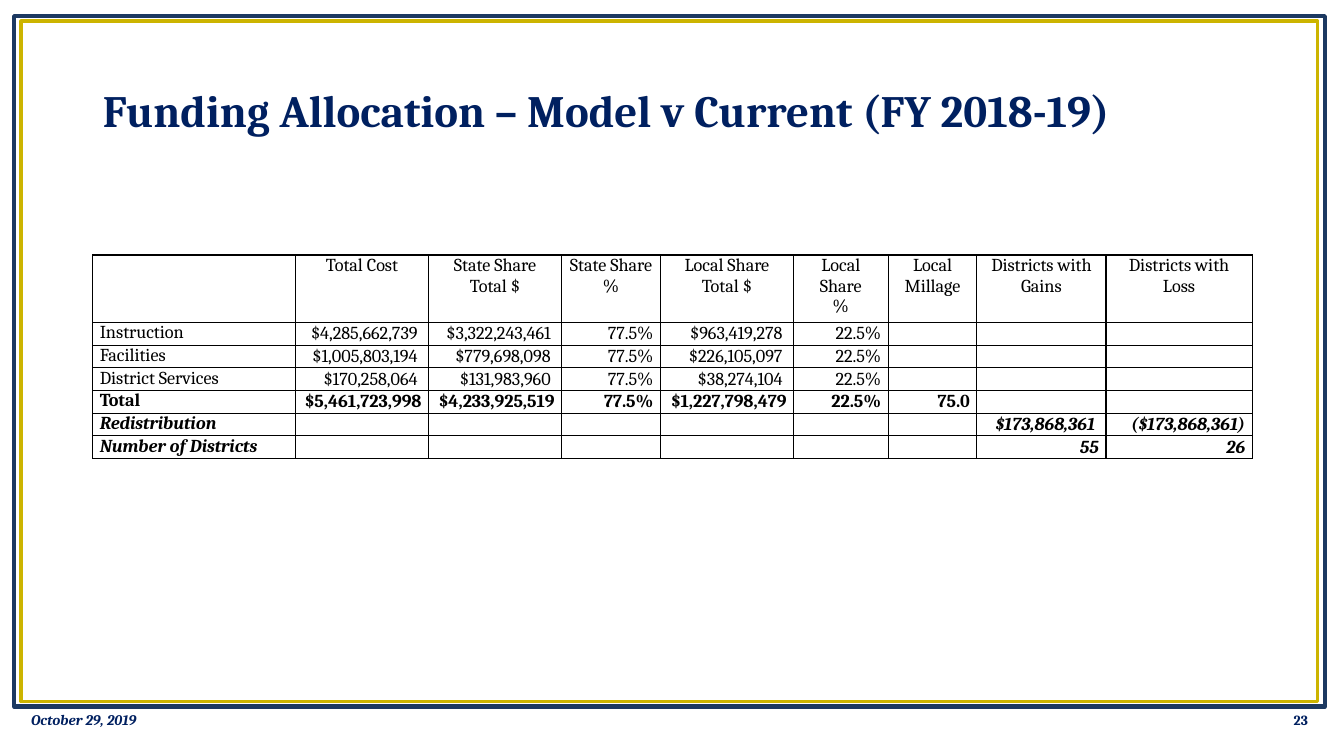
import dataclasses
import pptx
import pptx.dml.color
import pptx.enum.shapes
import pptx.enum.text
import pptx.oxml
import pptx.oxml.ns
import pptx.util
from pptx.util import Inches

ALIGN = pptx.enum.text.PP_ALIGN
ANCHOR = pptx.enum.text.MSO_ANCHOR


@dataclasses.dataclass(frozen=True)
class Theme:
    """Hold the colours, font and type sizes."""
    face: str = "Cambria"
    navy: str = "002060"
    frame: str = "1C3961"
    gold: str = "CCB400"
    ink: str = "000000"
    title: float = 32
    cell: float = 13
    date: float = 10.5
    page: float = 10


THEME = Theme()
WIDTHS = [2.01, 1.32, 1.32, 0.98, 1.32, 0.94, 0.88, 1.28, 1.45]
HEAD, LINE = 0.67, 0.225
ROWS = [
    ["", "Total Cost", "State Share\nTotal $", "State Share\n%",
     "Local Share\nTotal $", "Local Share\n%", "Local Millage",
     "Districts with Gains", "Districts with Loss"],
    ["Instruction", "$4,285,662,739 ", "$3,322,243,461 ", "77.5%",
     "$963,419,278 ", "22.5%", "", "", ""],
    ["Facilities", "$1,005,803,194 ", "$779,698,098 ", "77.5%",
     "$226,105,097 ", "22.5%", "", "", ""],
    ["District Services", "$170,258,064 ", "$131,983,960 ", "77.5%",
     "$38,274,104 ", "22.5%", "", "", ""],
    ["Total", "$5,461,723,998 ", "$4,233,925,519 ", "77.5%",
     "$1,227,798,479", "22.5%", "75.0", "", ""],
    ["Redistribution", "", "", "", "", "", "", "$173,868,361 ", "($173,868,361)"],
    ["Number of Districts", "", "", "", "", "", "", "55", "26"],
]
TOTAL, SHIFT, LAST = 4, 5, 6


def tint(code):
    """Turn a hex code into a colour."""
    return pptx.dml.color.RGBColor.from_string(code)


def style(frame, size, code, align, bold=False, slant=False):
    """Format every run in a text frame."""
    for para in frame.paragraphs:
        para.alignment = align
        for run in para.runs:
            font = run.font
            font.name, font.size = THEME.face, pptx.util.Pt(size)
            font.bold, font.italic = bold, slant
            font.color.rgb = tint(code)


def border(slide, box, code, weight):
    """Draw one unfilled frame in the box."""
    kind = pptx.enum.shapes.MSO_SHAPE.RECTANGLE
    shape = slide.shapes.add_shape(kind, *map(Inches, box))
    shape.shadow.inherit = False
    shape.fill.background()
    shape.line.color.rgb = tint(code)
    shape.line.width = pptx.util.Pt(weight)


def heading(slide, box, text):
    """Place the slide title in the box."""
    shape = slide.shapes.title
    shape.left, shape.top, shape.width, shape.height = map(Inches, box)
    frame = shape.text_frame
    frame.text = text
    frame.word_wrap = True
    frame.auto_size = pptx.enum.text.MSO_AUTO_SIZE.NONE
    frame.vertical_anchor = ANCHOR.MIDDLE
    frame.paragraphs[0].line_spacing = 0.9
    style(frame, THEME.title, THEME.navy, ALIGN.LEFT, bold=True)


def rule(cell):
    """Draw thin lines on all four sides of a cell."""
    props = cell._tc.get_or_add_tcPr()
    for spot, side in enumerate(["lnL", "lnR", "lnT", "lnB"]):
        props.insert(spot, pptx.oxml.parse_xml(
            f'<a:{side} {pptx.oxml.ns.nsdecls("a")} w="12700"><a:solidFill>'
            f'<a:srgbClr val="{THEME.ink}"/></a:solidFill></a:{side}>'))


def fill(cell, text, row, col):
    """Write and format one cell by its place in the grid."""
    cell.fill.background()
    rule(cell)
    cell.margin_left = cell.margin_right = Inches(0.07)
    cell.margin_top = cell.margin_bottom = 0
    frame = cell.text_frame
    frame.text = text
    if not text:
        end = frame.paragraphs[0]._p.get_or_add_endParaRPr()
        end.set("sz", str(int(THEME.cell * 100)))
    if row == 0 or col == 0:
        cell.vertical_anchor = ANCHOR.TOP
    else:
        cell.vertical_anchor = ANCHOR.BOTTOM if row == LAST else ANCHOR.MIDDLE
    align = ALIGN.CENTER if row == 0 else ALIGN.LEFT if col == 0 else ALIGN.RIGHT
    style(frame, THEME.cell, THEME.ink, align, row >= TOTAL, row >= SHIFT)


def grid(slide, box):
    """Build the funding table in the box."""
    shape = slide.shapes.add_table(len(ROWS), len(WIDTHS), *map(Inches, box))
    table = shape.table
    table.first_row = table.horz_banding = False
    for col, width in enumerate(WIDTHS):
        table.columns[col].width = Inches(width)
    for row, texts in enumerate(ROWS):
        table.rows[row].height = Inches(LINE if row else HEAD)
        for col, text in enumerate(texts):
            fill(table.cell(row, col), text, row, col)


def note(slide, box, text, size, align, slant=False):
    """Place one footer text in the box."""
    frame = slide.shapes.add_textbox(*map(Inches, box)).text_frame
    frame.word_wrap = True
    frame.vertical_anchor = ANCHOR.MIDDLE
    frame.text = text
    style(frame, size, THEME.navy, align, True, slant)


def main():
    """Build and save the slide."""
    deck = pptx.Presentation()
    deck.slide_width, deck.slide_height = Inches(13.33), Inches(7.5)
    slide = deck.slides.add_slide(deck.slide_layouts[5])
    border(slide, (0.14, 0.16, 13, 6.85), THEME.frame, 3)
    border(slide, (0.21, 0.21, 12.86, 6.75), THEME.gold, 2.5)
    heading(slide, (0.92, 0.4, 11.5, 1.45),
            "Funding Allocation – Model v Current (FY 2018-19)")
    grid(slide, (0.92, 2.53, sum(WIDTHS), HEAD + LINE * LAST))
    note(slide, (10.07, 6.94, 3, 0.4), "23", THEME.page, ALIGN.RIGHT)
    note(slide, (0.21, 6.94, 3, 0.4), "October 29, 2019", THEME.date,
         ALIGN.LEFT, slant=True)
    deck.save("out.pptx")


if __name__ == "__main__":
    main()
